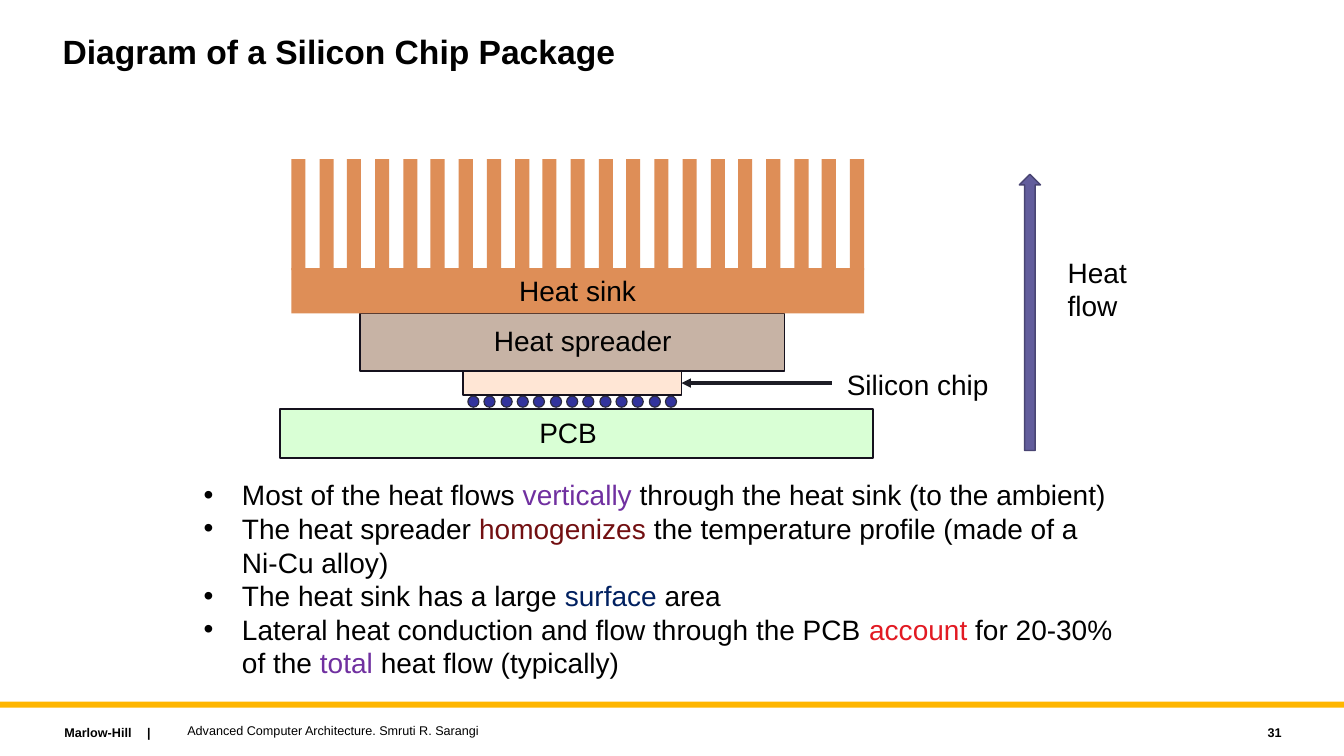
"""Build the silicon chip package slide."""
from dataclasses import dataclass

import lxml.etree
import pptx
import pptx.dml.color
import pptx.enum.dml
import pptx.enum.shapes
import pptx.enum.text
import pptx.oxml.ns
import pptx.presentation
import pptx.shapes.autoshape
import pptx.shapes.base
import pptx.shapes.connector
import pptx.slide
import pptx.text.text
import pptx.util

EMU_PER_PX = 9144
FONT = "Arial"
BLACK = "000000"
COPPER = "DE8E57"
OUTLINE = "15111D"
PURPLE = "7030A0"
FIN_COUNT = 21
BUMP_COUNT = 13
BULLET_INDENT = 38
SHAPES = pptx.enum.shapes.MSO_SHAPE
ALIGN = pptx.enum.text.PP_ALIGN
ANCHOR = pptx.enum.text.MSO_ANCHOR


@dataclass(frozen=True)
class Box:
    left: int
    top: int
    width: int
    height: int


@dataclass(frozen=True)
class Part:
    box: Box
    fill: str
    line: str | None = None
    line_points: float = 1
    kind: SHAPES = SHAPES.RECTANGLE


@dataclass(frozen=True)
class Label:
    box: Box
    lines: tuple[str, ...]
    size: float = 20
    bold: bool = False
    align: ALIGN = ALIGN.LEFT
    wrap: bool = False
    tab: int = 0


@dataclass(frozen=True)
class Span:
    text: str
    color: str = BLACK


CHIP = Part(Box(459, 368, 217, 24), "FFE6D5", OUTLINE, 1.13)
PARTS = (
    Part(Box(0, 696, 1333, 6), "FFB600"),
    Part(Box(357, 311, 421, 57), "C7B3A5", OUTLINE, 1.13),
    *(Part(Box(289 + round(index * 554 / (FIN_COUNT - 1)), 158, 14, 110), COPPER)
      for index in range(FIN_COUNT)),
    Part(Box(289, 266, 568, 45), COPPER),
    *(Part(Box(464 + round(index * 196 / (BUMP_COUNT - 1)), 393, 11, 11),
           "32339D", "2C2C42", 0.86, SHAPES.OVAL)
      for index in range(BUMP_COUNT)),
    Part(Box(278, 406, 588, 48), "D9FFD5", OUTLINE, 1.37),
    Part(Box(1011, 173, 21, 274), "625D9C", "494573", 1, SHAPES.UP_ARROW),
)
LABELS = (
    Label(Box(505, 266, 137, 44), ("Heat sink",)),
    Label(Box(480, 316, 198, 44), ("Heat spreader",)),
    Label(Box(830, 359, 162, 44), ("Silicon chip",)),
    Label(Box(525, 407, 78, 44), ("PCB",)),
    Label(Box(1049, 248, 79, 77), ("Heat", "flow")),
    Label(Box(54, 714, 227, 25), ("Marlow-Hill\t|",), 9, True, wrap=True, tab=82),
    Label(Box(176, 712, 800, 25),
          ("Advanced Computer Architecture. Smruti R. Sarangi",), 9, wrap=True),
    Label(Box(1141, 714, 140, 25), ("31",), 9, True, ALIGN.RIGHT, True),
)
BULLETS = (
    (Span("Most of the heat flows "), Span("vertically", PURPLE),
     Span(" through the heat sink (to the ambient)")),
    (Span("The heat spreader "), Span("homogenizes", "720F11"),
     Span(" the temperature profile (made of a\nNi-Cu alloy)")),
    (Span("The heat sink has a large "), Span("surface", "002060"), Span(" area")),
    (Span("Lateral heat conduction and flow through the PCB "),
     Span("account", "E21A23"), Span(" for 20-30%\nof the "),
     Span("total", PURPLE), Span(" heat flow (typically)")),
)


def px(length: int) -> pptx.util.Emu:
    return pptx.util.Emu(length * EMU_PER_PX)


def edges(box: Box) -> tuple[pptx.util.Emu, ...]:
    return px(box.left), px(box.top), px(box.width), px(box.height)


def rgb(color: str) -> pptx.dml.color.RGBColor:
    return pptx.dml.color.RGBColor.from_string(color)


def add_xml(parent: lxml.etree._Element, tag: str, **attributes: str) -> lxml.etree._Element:
    return lxml.etree.SubElement(parent, pptx.oxml.ns.qn(tag), attributes)


def add_run(paragraph: pptx.text.text._Paragraph, text: str, size: float,
            color: str = BLACK, bold: bool = False) -> None:
    run = paragraph.add_run()
    run.text = text
    run.font.name = FONT
    run.font.size = pptx.util.Pt(size)
    run.font.bold = bold
    run.font.color.rgb = rgb(color)


def move(shape: pptx.shapes.base.BaseShape, box: Box) -> None:
    shape.left, shape.top, shape.width, shape.height = edges(box)


def prepare_frame(frame: pptx.text.text.TextFrame, anchor: ANCHOR, wrap: bool = True) -> None:
    frame.auto_size = pptx.enum.text.MSO_AUTO_SIZE.NONE
    frame.vertical_anchor = anchor
    frame.word_wrap = wrap


def add_part(slide: pptx.slide.Slide, part: Part) -> pptx.shapes.autoshape.Shape:
    shape = slide.shapes.add_shape(part.kind, *edges(part.box))
    shape.shadow.inherit = False
    shape.fill.solid()
    shape.fill.fore_color.rgb = rgb(part.fill)
    if part.line is None:
        shape.line.fill.background()
    else:
        shape.line.color.rgb = rgb(part.line)
        shape.line.width = pptx.util.Pt(part.line_points)
    return shape


def add_label(slide: pptx.slide.Slide, label: Label) -> None:
    frame = slide.shapes.add_textbox(*edges(label.box)).text_frame
    prepare_frame(frame, ANCHOR.MIDDLE, label.wrap)
    for index, line in enumerate(label.lines):
        paragraph = frame.add_paragraph() if index else frame.paragraphs[0]
        paragraph.alignment = label.align
        if label.tab:
            tabs = add_xml(paragraph._p.get_or_add_pPr(), "a:tabLst")
            add_xml(tabs, "a:tab", pos=str(px(label.tab)), algn="l")
        add_run(paragraph, line, label.size, bold=label.bold)


def add_chip_pointer(slide: pptx.slide.Slide, chip: pptx.shapes.autoshape.Shape) -> None:
    pointer = slide.shapes.add_connector(
        pptx.enum.shapes.MSO_CONNECTOR.STRAIGHT, px(825), px(380), px(676), px(380))
    pointer.end_connect(chip, 3)
    pointer.line.color.rgb = rgb("1D1D25")
    pointer.line.width = pptx.util.Pt(2.25)
    add_xml(pointer.line._get_or_add_ln(), "a:tailEnd", type="triangle")
    add_xml(pointer._element.spPr, "a:effectLst")


def fill_title(slide: pptx.slide.Slide) -> None:
    title = slide.shapes.title
    move(title, Box(52, 30, 1000, 90))
    prepare_frame(title.text_frame, ANCHOR.TOP)
    paragraph = title.text_frame.paragraphs[0]
    paragraph.alignment = ALIGN.LEFT
    paragraph.line_spacing = 0.9
    add_run(paragraph, "Diagram of a Silicon Chip Package", 24, bold=True)


def fill_bullets(slide: pptx.slide.Slide) -> None:
    body = slide.placeholders[1]
    move(body, Box(192, 469, 935, 246))
    prepare_frame(body.text_frame, ANCHOR.TOP)
    for index, spans in enumerate(BULLETS):
        paragraph = body.text_frame.add_paragraph() if index else body.text_frame.paragraphs[0]
        properties = paragraph._p.get_or_add_pPr()
        properties.set("marL", str(px(BULLET_INDENT)))
        properties.set("indent", str(px(-BULLET_INDENT)))
        add_xml(properties, "a:buFont", typeface=FONT)
        add_xml(properties, "a:buChar", char="•")
        paragraph.space_before = pptx.util.Pt(0)
        for span in spans:
            for line_index, line in enumerate(span.text.split("\n")):
                if line_index:
                    paragraph.add_line_break()
                add_run(paragraph, line, 20, span.color)


def main() -> None:
    presentation = pptx.Presentation()
    presentation.slide_width, presentation.slide_height = px(1333), px(750)
    slide = presentation.slides.add_slide(presentation.slide_layouts[1])
    fill_title(slide)
    fill_bullets(slide)
    chip = add_part(slide, CHIP)
    for part in PARTS:
        add_part(slide, part)
    add_chip_pointer(slide, chip)
    for label in LABELS:
        add_label(slide, label)
    presentation.save("out.pptx")


if __name__ == "__main__":
    main()
